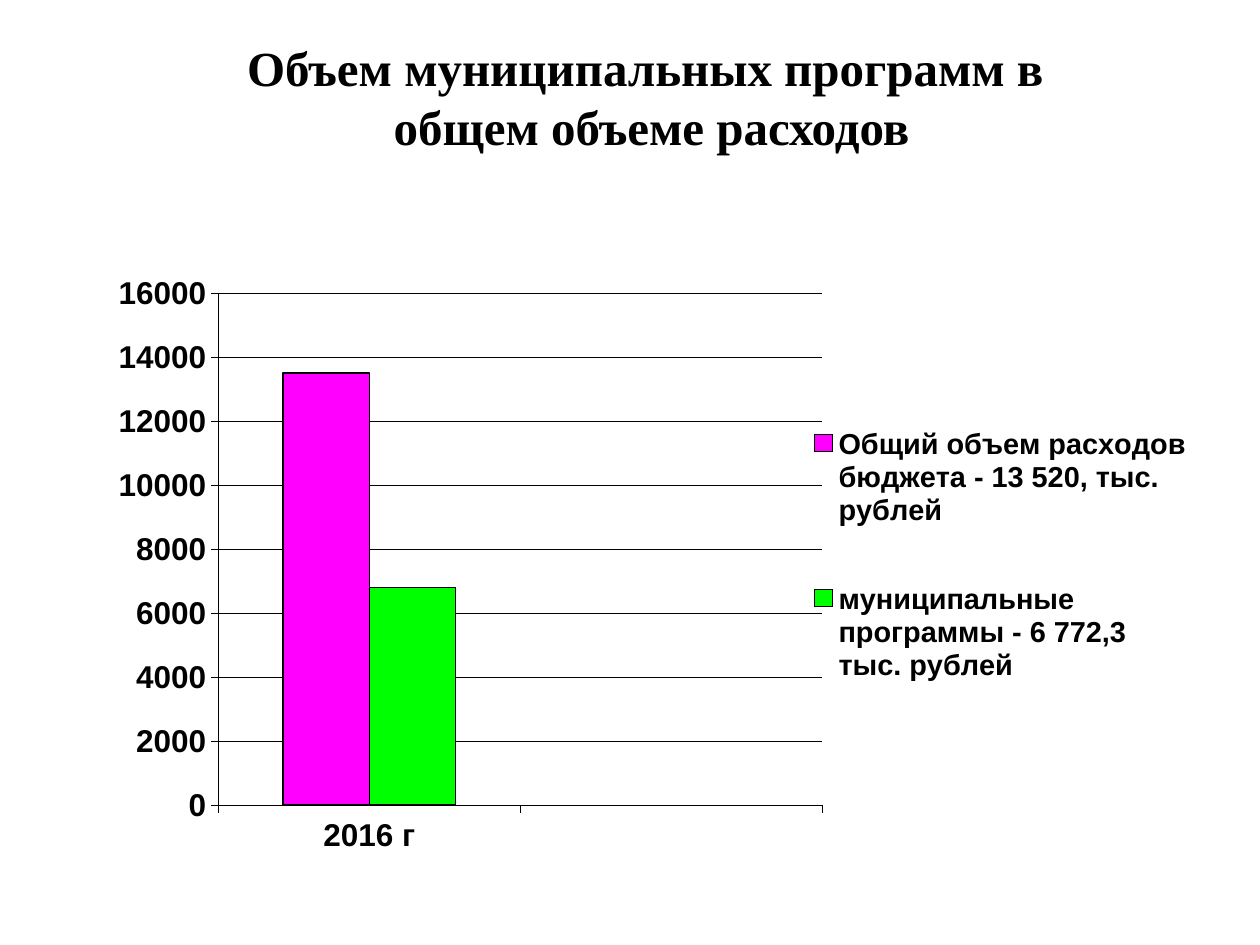
from lxml import etree
from pptx import Presentation
from pptx.chart.data import CategoryChartData
from pptx.dml.color import RGBColor
from pptx.enum import chart as ch, text
from pptx.util import Inches, Pt

# Content
TITLE = ["Объем муниципальных программ в ", "общем объеме расходов"]
CATEGORIES = ["2016 г", ""]
SERIES = [
    ("Общий объем расходов бюджета - 13 520, тыс. рублей", 13500, "total"),
    ("муниципальные программы - 6 772,3 тыс. рублей", 6800, "programs"),
]
COLORS = {"ink": "000000", "total": "FF00FF", "programs": "00FF00"}
PLOT_AREA = {"x": 0.12, "y": 0.03, "w": 0.54, "h": 0.84}
LEGEND_AREA = {"x": 0.66, "y": 0.16, "w": 0.34, "h": 0.6}


def color(name):
    return RGBColor.from_string(COLORS[name])


def set_font(font, name="Arial", size=18):
    font.name, font.size, font.bold = name, Pt(size), True
    font.color.rgb = color("ink")


def add_text(tf, lines, **fmt):
    for i, line in enumerate(lines):
        p = tf.paragraphs[0] if i == 0 else tf.add_paragraph()
        p.alignment = text.PP_ALIGN.CENTER
        r = p.add_run()
        r.text = line
        set_font(r.font, **fmt)


def set_line(line, width):
    line.color.rgb = color("ink")
    line.width = Pt(width)


def set_layout(parent, area, index, inner=False):
    ns = "{http://schemas.openxmlformats.org/drawingml/2006/chart}"
    for old in parent.findall(ns + "layout"):
        parent.remove(old)
    layout = etree.Element(ns + "layout")
    parent.insert(index, layout)
    manual = etree.SubElement(layout, ns + "manualLayout")
    if inner:
        etree.SubElement(manual, ns + "layoutTarget").set("val", "inner")
    for key in "xy":
        etree.SubElement(manual, ns + key + "Mode").set("val", "edge")
    for key, value in area.items():
        etree.SubElement(manual, ns + key).set("val", str(value))


prs = Presentation()
prs.slide_width, prs.slide_height = Inches(10), Inches(7.5)
s = prs.slides.add_slide(prs.slide_layouts[5])

# Title
sp = s.shapes.title
sp.left, sp.top, sp.width, sp.height = map(Inches, (0.67, 0.25, 9, 1.25))
sp.text_frame.vertical_anchor = text.MSO_ANCHOR.TOP
add_text(sp.text_frame, TITLE, name="Times New Roman", size=28)

# Chart
data = CategoryChartData()
data.categories = CATEGORIES
for name, value, _ in SERIES:
    data.add_series(name, [value, None])
chart = s.shapes.add_chart(
    ch.XL_CHART_TYPE.COLUMN_CLUSTERED,
    *map(Inches, (0.67, 2.18, 8.87, 4.84)), data).chart
chart.has_title = False
set_font(chart.font)

plot = chart.plots[0]
plot.gap_width, plot.overlap, plot.vary_by_categories = 150, 0, False
for series, (_, _, key) in zip(plot.series, SERIES):
    series.format.fill.solid()
    series.format.fill.fore_color.rgb = color(key)
    set_line(series.format.line, 1)

# Axes
for axis in (chart.category_axis, chart.value_axis):
    axis.major_tick_mark = ch.XL_TICK_MARK.OUTSIDE
    set_font(axis.tick_labels.font)
    set_line(axis.format.line, 0.25)
chart.category_axis.tick_label_position = ch.XL_TICK_LABEL_POSITION.LOW
scale = chart.value_axis
scale.minimum_scale, scale.maximum_scale, scale.major_unit = 0, 16000, 2000
scale.tick_labels.number_format = "0"
scale.tick_labels.number_format_is_linked = False
set_line(scale.major_gridlines.format.line, 0.25)

# Legend and placement inside the chart
chart.has_legend = True
legend = chart.legend
legend.position = ch.XL_LEGEND_POSITION.RIGHT
legend.include_in_layout = False
set_font(legend.font, size=16.5)
set_layout(legend._element, LEGEND_AREA, index=1)
set_layout(chart._chartSpace.chart.plotArea, PLOT_AREA, index=0, inner=True)

prs.save("out.pptx")
